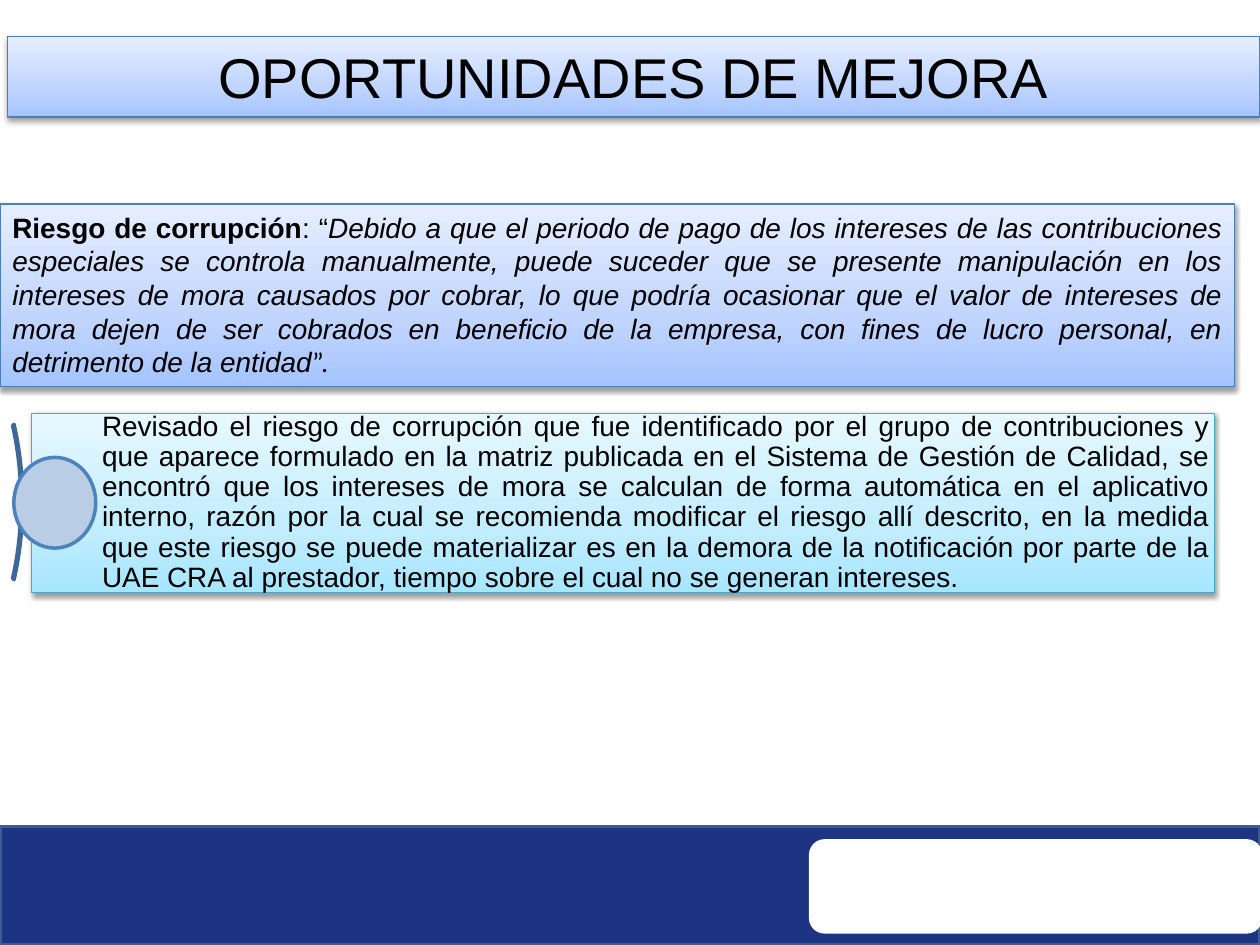
from lxml.etree import SubElement
from pptx import Presentation
from pptx.dml.color import RGBColor
from pptx.enum.shapes import MSO_SHAPE
from pptx.enum.text import MSO_ANCHOR, PP_ALIGN
from pptx.oxml.ns import qn
from pptx.util import Inches, Pt

BLACK = RGBColor(0x00, 0x00, 0x00)
WHITE = RGBColor(0xFF, 0xFF, 0xFF)
NAVY = RGBColor(0x1C, 0x34, 0x81)
NAVY_EDGE = RGBColor(0x3A, 0x5F, 0x8C)
ARC_EDGE = RGBColor(0x3F, 0x67, 0x97)
CIRCLE_FILL = RGBColor(0xB9, 0xCD, 0xE5)
CIRCLE_EDGE = RGBColor(0x4F, 0x81, 0xBD)
BLUE_EDGE = RGBColor(0x4B, 0x7E, 0xBC)
AQUA_EDGE = RGBColor(0x46, 0xAA, 0xC5)
BLUE_STOPS = [RGBColor(0xA4, 0xC4, 0xFF), RGBColor(0xBF, 0xD4, 0xFF), RGBColor(0xE6, 0xEE, 0xFF)]
AQUA_STOPS = [RGBColor(0xA7, 0xE6, 0xFF), RGBColor(0xC1, 0xED, 0xFF), RGBColor(0xE7, 0xF8, 0xFF)]
STOP_POSITIONS = [0, 35000, 100000]

presentation = Presentation()
presentation.slide_width = Inches(10)
presentation.slide_height = Inches(7.5)
slide = presentation.slides.add_slide(presentation.slide_layouts[6])


def add_shape(preset, box, fill=None, edge=None, edge_width=2):
    shape = slide.shapes.add_shape(preset, *[Inches(length) for length in box])
    shape.shadow.inherit = False
    if fill is None:
        shape.fill.background()
    else:
        shape.fill.solid()
        shape.fill.fore_color.rgb = fill
    if edge is None:
        shape.line.fill.background()
    else:
        shape.line.color.rgb = edge
        shape.line.width = Pt(edge_width)
    return shape


def add_panel(box, stops, edge, paragraph_format, runs):
    """Add a shadowed gradient rectangle; runs are (text, font values) pairs."""
    shape = add_shape(MSO_SHAPE.RECTANGLE, box, edge=edge, edge_width=0.75)
    shape.fill.gradient()
    shape.fill.gradient_angle = 90
    properties = shape._element.spPr
    stop_list = properties.find(qn("a:gradFill")).find(qn("a:gsLst"))
    for default_stop in list(stop_list):
        stop_list.remove(default_stop)
    for position, color in zip(STOP_POSITIONS, stops):
        stop = SubElement(stop_list, qn("a:gs"), pos=str(position))
        SubElement(stop, qn("a:srgbClr"), val=str(color))
    shadow = SubElement(properties.find(qn("a:effectLst")), qn("a:outerShdw"),
                        blurRad="40000", dist="20000", dir="5400000", rotWithShape="0")
    shadow_color = SubElement(shadow, qn("a:srgbClr"), val=str(BLACK))
    SubElement(shadow_color, qn("a:alpha"), val="38000")

    shape.text_frame.word_wrap = True
    paragraph = shape.text_frame.paragraphs[0]
    for name, value in paragraph_format.items():
        setattr(paragraph, name, value)
    for text, font_values in runs:
        run = paragraph.add_run()
        run.text = text
        run.font.color.rgb = BLACK
        for name, value in ({"name": "Arial", "size": Pt(16)} | font_values).items():
            setattr(run.font, name, value)
    return shape


# Footer band
add_shape(MSO_SHAPE.RECTANGLE, (0, 6.56, 10, 0.94), NAVY, NAVY_EDGE)
add_shape(MSO_SHAPE.ROUNDED_RECTANGLE, (6.42, 6.66, 3.6, 0.75), WHITE)

# Risk statement and title
risk_panel = add_panel(
    (0, 1.62, 9.8, 1.45), BLUE_STOPS, BLUE_EDGE,
    {"alignment": PP_ALIGN.JUSTIFY},
    [
        ("Riesgo de corrupción", {"bold": True}),
        (": “", {}),
        ("Debido a que el periodo de pago de los intereses de las contribuciones especiales "
         "se controla manualmente, puede suceder que se presente manipulación en los intereses "
         "de mora causados por cobrar, lo que podría ocasionar que el valor de intereses de mora "
         "dejen de ser cobrados en beneficio de la empresa, con fines de lucro personal, en "
         "detrimento de la entidad", {"italic": True}),
        ("”.", {"name": "Calibri"}),
    ])
risk_panel.text_frame.vertical_anchor = MSO_ANCHOR.TOP
title_panel = add_panel(
    (0.06, 0.29, 9.94, 0.64), BLUE_STOPS, BLUE_EDGE,
    {"alignment": PP_ALIGN.CENTER},
    [("OPORTUNIDADES DE MEJORA", {"size": Pt(32)})])
title_panel.text_frame.vertical_anchor = MSO_ANCHOR.TOP

# Finding with its arc and circle
arc = add_shape(MSO_SHAPE.BLOCK_ARC, (-1.19, 2.57, 1.37, 2.83), edge=ARC_EDGE)
for index, value in enumerate([189, 27, 0.01]):
    arc.adjustments[index] = value
finding_panel = add_panel(
    (0.25, 3.28, 9.39, 1.42), AQUA_STOPS, AQUA_EDGE,
    {"alignment": PP_ALIGN.JUSTIFY, "line_spacing": 0.9},
    [("Revisado el riesgo de corrupción que fue identificado por el grupo de contribuciones y "
      "que aparece formulado en la matriz publicada en el Sistema de Gestión de Calidad, se "
      "encontró que los intereses de mora se calculan de forma automática en el aplicativo "
      "interno, razón por la cual se recomienda modificar el riesgo allí descrito, en la medida "
      "que este riesgo se puede materializar es en la demora de la notificación por parte de la "
      "UAE CRA al prestador, tiempo sobre el cual no se generan intereses.", {})])
finding_format = {
    "vertical_anchor": MSO_ANCHOR.MIDDLE,
    "margin_left": Inches(0.56),
    "margin_right": Inches(0.04),
    "margin_top": Inches(0.04),
    "margin_bottom": Inches(0.04),
}
for name, value in finding_format.items():
    setattr(finding_panel.text_frame, name, value)
add_shape(MSO_SHAPE.OVAL, (0.11, 3.63, 0.65, 0.72), CIRCLE_FILL, CIRCLE_EDGE)

presentation.save("out.pptx")
